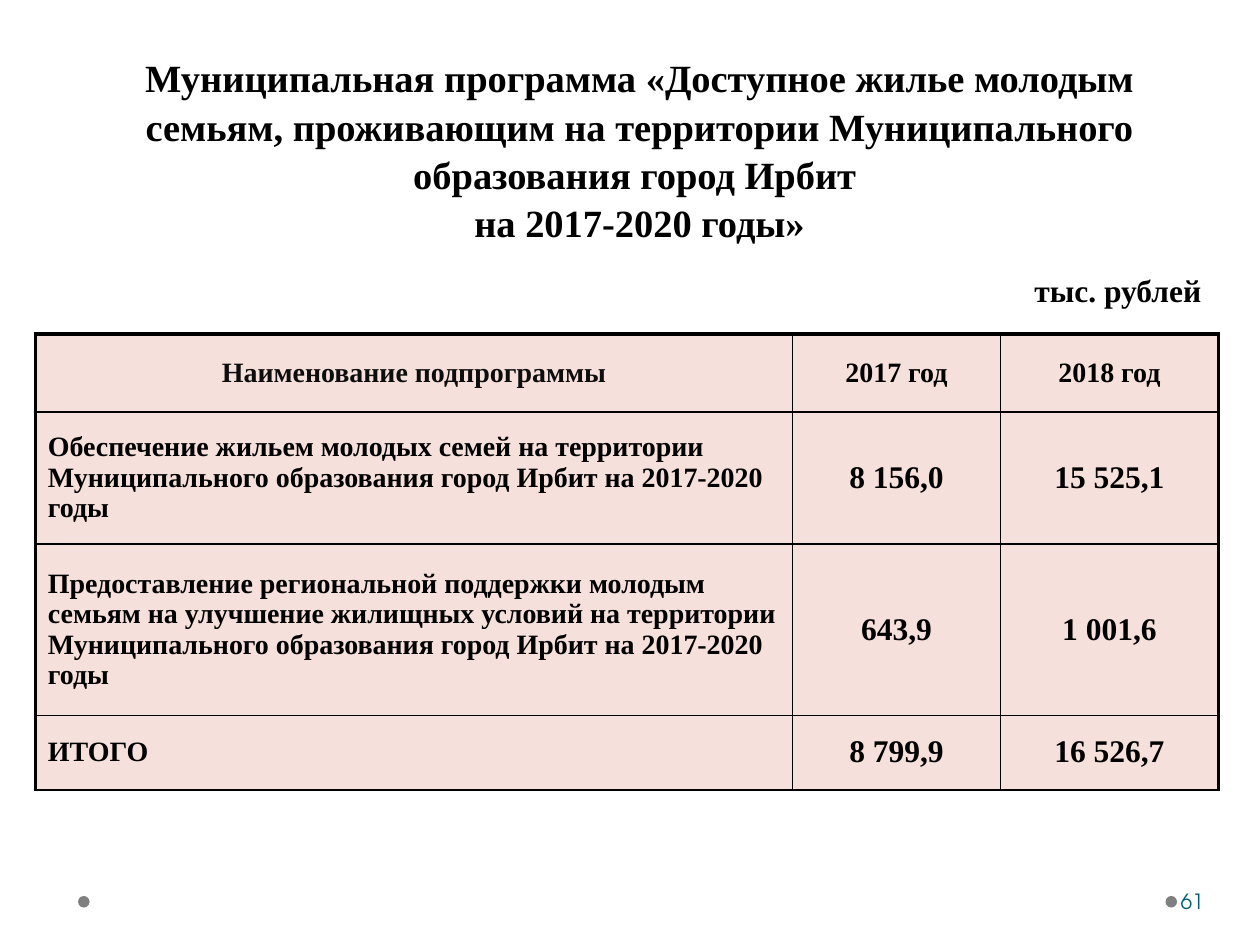
"""Build the slide on the housing programme for young families."""
import pptx
import pptx.dml.color
import pptx.enum.shapes
import pptx.enum.text
import pptx.oxml
import pptx.oxml.ns
import pptx.util

Pt = pptx.util.Pt
ALIGN = pptx.enum.text.PP_ALIGN
ANCHOR = pptx.enum.text.MSO_ANCHOR
SERIF = "Times New Roman"


def paint(hue):
    return pptx.dml.color.RGBColor.from_string(hue)


def write(para, text, size, align=ALIGN.LEFT, face=SERIF, hue="000000", bold=True):
    para.alignment = align
    run = para.add_run()
    run.text = text
    run.font.name = face
    run.font.size = Pt(size)
    run.font.bold = bold
    run.font.color.rgb = paint(hue)


deck = pptx.Presentation()
deck.slide_width, deck.slide_height = Pt(720), Pt(540)
slide = deck.slides.add_slide(deck.slide_layouts[5])

title = slide.shapes.title
title.left, title.top, title.width, title.height = Pt(36.7), Pt(26), Pt(657.4), Pt(113.8)
frame = title.text_frame
frame.word_wrap = True
frame.auto_size = pptx.enum.text.MSO_AUTO_SIZE.NONE
frame.vertical_anchor = ANCHOR.TOP
lines = [
    "Муниципальная программа «Доступное жилье молодым семьям, "
    "проживающим на территории Муниципального образования город Ирбит ",
    "на 2017-2020 годы»",
]
for i, line in enumerate(lines):
    para = frame.add_paragraph() if i else frame.paragraphs[0]
    para.line_spacing = 1.05
    write(para, line, 22, ALIGN.CENTER)

for left in (666, 44.6):
    dot = slide.shapes.add_shape(
        pptx.enum.shapes.MSO_SHAPE.OVAL, Pt(left), Pt(512), Pt(6.6), Pt(6.6))
    dot.shadow.inherit = False
    dot.fill.solid()
    dot.fill.fore_color.rgb = paint("808080")
    dot.line.fill.background()

page = slide.shapes.add_textbox(Pt(672.6), Pt(500.4), Pt(44), Pt(28.8)).text_frame
page.word_wrap = True
page.vertical_anchor = ANCHOR.MIDDLE
page.margin_left, page.margin_right = Pt(2), Pt(3.6)
write(page.paragraphs[0], "61", 12, face="TeX Gyre Adventor", hue="045D75", bold=False)

unit = slide.shapes.add_textbox(Pt(584), Pt(151.2), Pt(111), Pt(29)).text_frame
unit.word_wrap = False
write(unit.paragraphs[0], "тыс. рублей", 18)

rows = [
    ("Наименование подпрограммы", "2017 год", "2018 год"),
    ("Обеспечение жильем молодых семей на территории Муниципального "
     "образования город Ирбит на 2017-2020 годы", "8 156,0", "15 525,1"),
    ("Предоставление региональной поддержки молодым семьям на улучшение "
     "жилищных условий на территории Муниципального образования город Ирбит "
     "на 2017-2020 годы", "643,9", "1 001,6"),
    ("ИТОГО", "8 799,9", "16 526,7"),
]
widths = [432.7, 118.8, 124.6]
heights = [44.6, 75.6, 97.9, 42.5]
table = slide.shapes.add_table(
    len(rows), len(widths), Pt(20.2), Pt(190.8), Pt(sum(widths)), Pt(sum(heights))).table
table.first_row = table.horz_banding = False
for col, width in zip(table.columns, widths):
    col.width = Pt(width)
for row, height in zip(table.rows, heights):
    row.height = Pt(height)

for r, row in enumerate(rows):
    for c, text in enumerate(row):
        cell = table.cell(r, c)
        cell.vertical_anchor = ANCHOR.MIDDLE
        para = cell.text_frame.paragraphs[0]
        para.line_spacing = 0.97
        write(para, text, 18 if r and c else 16,
              ALIGN.LEFT if r and not c else ALIGN.CENTER,
              hue="000000" if r or c else "0D0D0D")
        thick = {"L": c == 0, "R": c == len(widths) - 1, "T": r == 0, "B": False}
        props = cell._tc.get_or_add_tcPr()
        for side, wide in thick.items():
            props.append(pptx.oxml.parse_xml(
                f'<a:ln{side} {pptx.oxml.ns.nsdecls("a")} w="{Pt(2.25 if wide else 1)}">'
                '<a:solidFill><a:srgbClr val="000000"/></a:solidFill>'
                f'</a:ln{side}>'))
        cell.fill.solid()
        cell.fill.fore_color.rgb = paint("F6E0DB")

deck.save("out.pptx")
